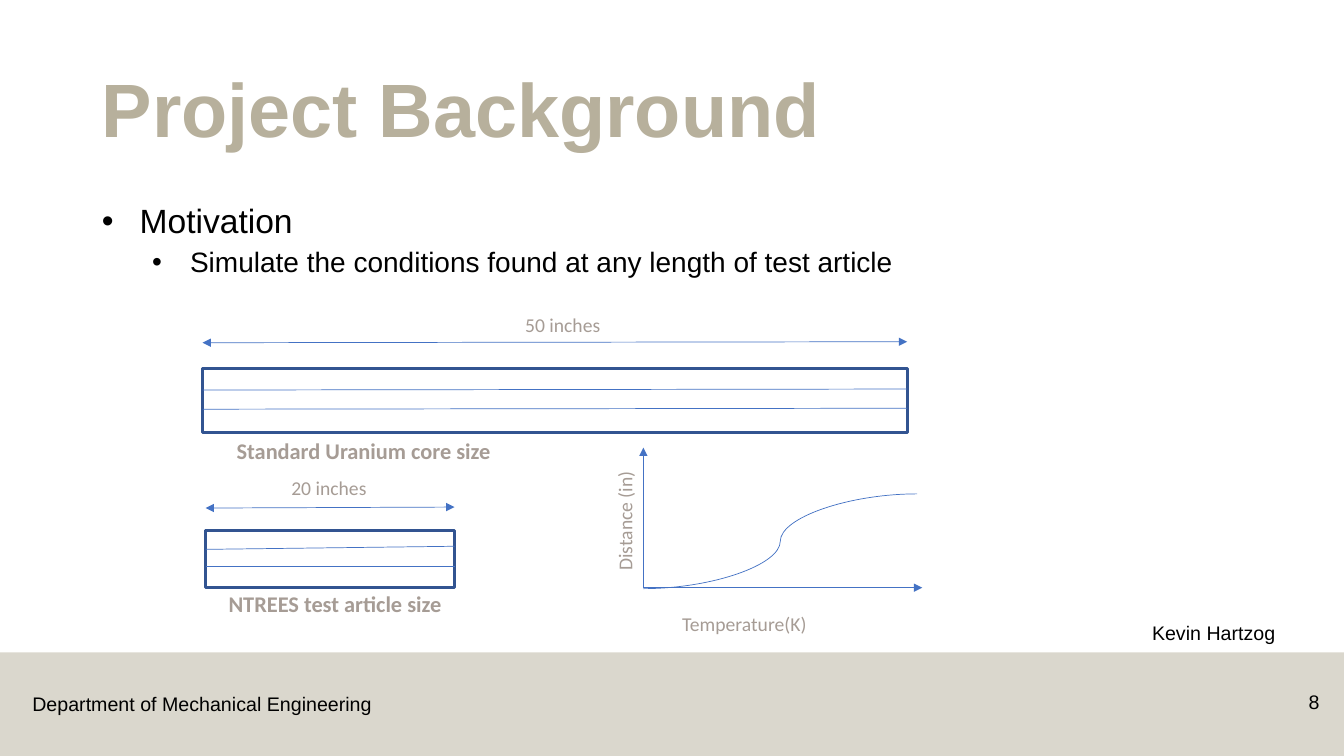
from lxml.etree import SubElement as Sub
from pptx import Presentation
from pptx.dml.color import RGBColor as Rgb
from pptx.enum.shapes import MSO_CONNECTOR as Link, MSO_SHAPE as Form
from pptx.enum.text import MSO_ANCHOR as Anchor, PP_ALIGN as Align
from pptx.oxml.ns import qn
from pptx.util import Pt

HUES = {"band": "B7B09C", "ink": "000000", "label": "A69C95",
        "line": "4472C4", "frame": "325491"}

# Text formats
TITLE = {"name": "Arial", "size": Pt(54), "bold": True, "hue": "band"}
HEAD = {"name": "Arial", "size": Pt(24), "hue": "ink"}
POINT = {**HEAD, "size": Pt(20)}
FOOT = {**HEAD, "size": Pt(14)}
LABEL = {"name": "Calibri", "size": Pt(14), "hue": "label"}
NAME = {**LABEL, "size": Pt(16), "bold": True}


def tint(hue):
    return Rgb.from_string(HUES[hue])


def apply(item, form):
    for key, value in form.items():
        setattr(item, key, value)


def place(shape, box):
    keys = ("left", "top", "width", "height")
    apply(shape, dict(zip(keys, map(Pt, box))))


def write(para, text, form, **layout):
    apply(para, layout)
    font = para.add_run().font
    para.runs[0].text = text
    apply(font, {k: v for k, v in form.items() if k != "hue"})
    font.color.rgb = tint(form["hue"])


def add_text(slide, text, box, form, turn=0, wrap=True, **layout):
    shape = slide.shapes.add_textbox(*map(Pt, box))
    shape.rotation = turn
    shape.text_frame.word_wrap = wrap
    write(shape.text_frame.paragraphs[0], text, form, **layout)


def add_band(slide):
    band = slide.shapes.add_shape(Form.RECTANGLE, 0, Pt(466), Pt(960), Pt(74))
    band.shadow.inherit = False
    band.fill.solid()
    band.fill.fore_color.rgb = tint("band")
    band.line.fill.background()
    color = band.fill._xPr.find(".//" + qn("a:srgbClr"))
    Sub(color, qn("a:alpha"), val="50000")


def add_frame(slide, box):
    frame = slide.shapes.add_shape(Form.RECTANGLE, *map(Pt, box))
    frame.shadow.inherit = False
    frame.fill.background()
    frame.line.color.rgb = tint("frame")
    frame.line.width = Pt(2.25)


def add_line(slide, ends, tips=(), kind=Link.STRAIGHT):
    line = slide.shapes.add_connector(kind, *map(Pt, ends))
    line.line.color.rgb = tint("line")
    line.line.width = Pt(0.5)
    for tip in tips:
        Sub(line.get_or_add_ln(), qn(f"a:{tip}End"), type="triangle")
    Sub(line._element.spPr, qn("a:effectLst"))


def add_rod(slide, box, size, rows):
    """A framed rod with inner lines and a size arrow above it."""
    left, top, width, height = box
    right = left + width
    add_frame(slide, box)
    for start, end in rows:
        add_line(slide, (left, start, right, end))
    add_line(slide, (left, size, right, size - 0.7), ("head", "tail"))


def add_bullet(para, text, form, left, **layout):
    props = para._p.get_or_add_pPr()
    props.set("marL", str(Pt(left)))
    props.set("indent", str(Pt(-27)))
    Sub(props, qn("a:buFont"), typeface="Arial")
    Sub(props, qn("a:buChar"), char="•")
    write(para, text, form, line_spacing=0.9, **layout)


def add_list(body):
    place(body, (65.5, 142.6, 705, 163.4))
    frame = body.text_frame
    add_bullet(frame.paragraphs[0], "Motivation", HEAD, 27,
               space_before=Pt(0))
    add_bullet(frame.add_paragraph(),
               "Simulate the conditions found at any length of test article",
               POINT, 63, level=1, space_before=Pt(5))


def add_title(title):
    place(title, (65.5, 54, 828, 59.8))
    title.text_frame.vertical_anchor = Anchor.BOTTOM
    write(title.text_frame.paragraphs[0], "Project Background", TITLE,
          alignment=Align.LEFT, line_spacing=0.9)


def add_graph(slide):
    left, base = 459.6, 419.8
    add_line(slide, (655.2, 352.8, left, 420.5), kind=Link.CURVE)
    for end in ((left, 319.7), (658.8, base)):
        add_line(slide, (left, base, *end), ("tail",))
    add_text(slide, "Temperature(K)", (480.2, 433.4, 216, 24.5), LABEL)
    add_text(slide, "Distance (in)", (338.4, 294.5, 216, 24.5), LABEL, 270)


def main():
    deck = Presentation()
    apply(deck, {"slide_width": Pt(960), "slide_height": Pt(540)})
    slide = deck.slides.add_slide(deck.slide_layouts[1])

    # Footer
    add_band(slide)
    add_text(slide, "Department of Mechanical Engineering",
             (16, 491, 258.5, 24.5), FOOT, wrap=False)
    add_text(slide, "8", (894.2, 489, 55.4, 28.8), FOOT,
             alignment=Align.RIGHT)
    add_text(slide, "Kevin Hartzog", (815.8, 442, 144, 24.5), FOOT,
             line_spacing=0.9)

    # Title and list
    add_title(slide.shapes.title)
    add_list(slide.placeholders[1])

    # Rods with their sizes and names
    add_rod(slide, (144.7, 263.5, 503.3, 45.4), 244.8,
            ((278.6, 277.9), (292.3, 291.6)))
    add_rod(slide, (146.9, 378.7, 177.8, 41), 362.9,
            ((392.4, 390.2), (404.6, 404.6)))
    for text, left, top, form in (
            ("50 inches", 368, 220.3, LABEL),
            ("20 inches", 201, 336.2, LABEL),
            ("Standard Uranium core size", 162, 309, NAME),
            ("NTREES test article size", 156.2, 418.3, NAME)):
        add_text(slide, text, (left, top, 216, 25), form)

    # Distance against temperature
    add_graph(slide)
    deck.save("out.pptx")


if __name__ == "__main__":
    main()
